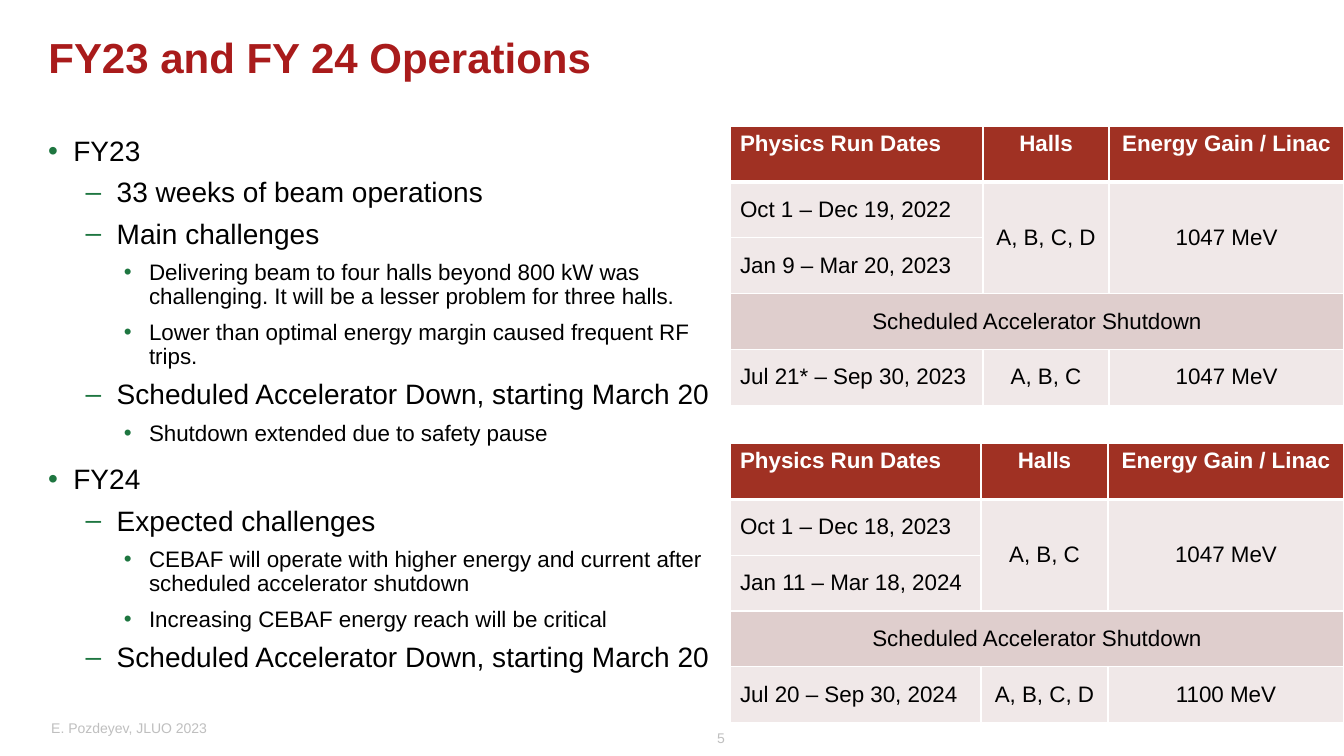
from lxml import etree
from pptx import Presentation
from pptx.dml.color import RGBColor
from pptx.enum.text import MSO_ANCHOR, PP_ALIGN
from pptx.oxml.ns import qn
from pptx.util import Inches, Pt

TOP, MIDDLE = MSO_ANCHOR.TOP, MSO_ANCHOR.MIDDLE
LEFT, CENTER, RIGHT = PP_ALIGN.LEFT, PP_ALIGN.CENTER, PP_ALIGN.RIGHT

RED = RGBColor(0xA9, 0x1B, 0x1B)
BRICK = RGBColor(0xA0, 0x31, 0x23)
PALE = RGBColor(0xF0, 0xE8, 0xE8)
ROSE = RGBColor(0xDF, 0xCE, 0xCD)
GREEN = RGBColor(0x1E, 0x76, 0x40)
GREY = RGBColor(0xBF, 0xBF, 0xBF)
WHITE = RGBColor(0xFF, 0xFF, 0xFF)
BLACK = RGBColor(0, 0, 0)

TITLE = "FY23 and FY 24 Operations"
POINTS = [
    (0, "FY23"),
    (1, "33 weeks of beam operations"),
    (1, "Main challenges"),
    (2, "Delivering beam to four halls beyond 800 kW was challenging. "
        "It will be a lesser problem for three halls."),
    (2, "Lower than optimal energy margin caused frequent RF trips."),
    (1, "Scheduled Accelerator Down, starting March 20"),
    (2, "Shutdown extended due to safety pause"),
    (0, "FY24"),
    (1, "Expected challenges"),
    (2, "CEBAF will operate with higher energy and current after "
        "scheduled accelerator shutdown"),
    (2, "Increasing CEBAF energy reach will be critical"),
    (1, "Scheduled Accelerator Down, starting March 20"),
]
LEVELS = [
    ("•", 0.25, 0.25, 20, 14),
    ("–", 0.68, 0.31, 20, 8),
    ("•", 1, 0.25, 16, 8),
]
HEAD = ("Physics Run Dates", "Halls", "Energy Gain / Linac")
DOWN = ("Scheduled Accelerator Shutdown", "", "")
RUNS = [
    (1.25, (2.51, 1.25, 2.33), [
        HEAD,
        ("Oct 1 – Dec 19, 2022", "A, B, C, D", "1047 MeV"),
        ("Jan 9 – Mar 20, 2023", "", ""),
        DOWN,
        ("Jul 21* – Sep 30, 2023", "A, B, C", "1047 MeV"),
    ]),
    (4.4, (2.49, 1.26, 2.34), [
        HEAD,
        ("Oct 1 – Dec 18, 2023", "A, B, C", "1047 MeV"),
        ("Jan 11 – Mar 18, 2024", "", ""),
        DOWN,
        ("Jul 20 – Sep 30, 2024", "A, B, C, D", "1100 MeV"),
    ]),
]
FOOTS = [
    ("E. Pozdeyev, JLUO 2023", (0.41, 7.12, 4.22, 0.2), 0.1, MIDDLE, LEFT),
    ("5", (6.88, 7.24, 0.31, 0.17), 0, TOP, RIGHT),
]


def style(para, size, color, bold=False, align=LEFT):
    para.alignment = align
    font = para.font
    font.name, font.size, font.bold = "Arial", Pt(size), bold
    font.color.rgb = color


def add_box(slide, place):
    frame = slide.shapes.add_textbox(*map(Inches, place)).text_frame
    frame.word_wrap = True
    return frame


def add_bullet(para, sign, left, hang):
    props = para._p.get_or_add_pPr()
    props.set("marL", str(Inches(left)))
    props.set("indent", str(-Inches(hang)))
    tint = etree.SubElement(props, qn("a:buClr"))
    etree.SubElement(tint, qn("a:srgbClr"), val=str(GREEN))
    etree.SubElement(props, qn("a:buFont"), typeface="Arial")
    etree.SubElement(props, qn("a:buChar"), char=sign)


def add_edges(cell, top, base):
    props = cell._tc.get_or_add_tcPr()
    sides = (("L", 1), ("R", 1), ("T", top), ("B", base))
    for spot, (side, width) in enumerate(sides):
        line = etree.Element(qn("a:ln" + side), w=str(Pt(width)))
        fill = etree.SubElement(line, qn("a:solidFill"))
        etree.SubElement(fill, qn("a:srgbClr"), val=str(WHITE))
        props.insert(spot, line)


def add_runs(slide, top, widths, rows):
    place = map(Inches, (7.24, top, sum(widths), 2.77))
    table = slide.shapes.add_table(len(rows), len(widths), *place).table
    for col, width in zip(table.columns, widths):
        col.width = Inches(width)
    for r, row in enumerate(rows):
        for c, text in enumerate(row):
            cell = table.cell(r, c)
            cell.text = text
            cell.vertical_anchor = MIDDLE if r else TOP
            cell.fill.solid()
            cell.fill.fore_color.rgb = (
                BRICK if r == 0 else ROSE if row is DOWN else PALE)
            style(cell.text_frame.paragraphs[0], 16, BLACK if r else WHITE,
                  r == 0, CENTER if c or row is DOWN else LEFT)
            add_edges(cell, 3 if r == 1 else 1, 1 if r else 3)
    for c in (1, 2):
        table.cell(1, c).merge(table.cell(2, c))
    table.cell(3, 0).merge(table.cell(3, 2))


def main():
    deck = Presentation()
    deck.slide_width, deck.slide_height = Inches(13.33), Inches(7.5)
    slide = deck.slides.add_slide(deck.slide_layouts[5])

    title = slide.shapes.title
    title.left, title.top = Inches(0.38), Inches(0.34)
    title.width, title.height = Inches(12.49), Inches(0.53)
    title.text = TITLE
    title.text_frame.vertical_anchor = MIDDLE
    para = title.text_frame.paragraphs[0]
    para.line_spacing = 0.85
    style(para, 30, RED, True)

    frame = add_box(slide, (0.38, 1.31, 6.76, 5.73))
    for i, (level, text) in enumerate(POINTS):
        sign, left, hang, size, gap = LEVELS[level]
        para = frame.add_paragraph() if i else frame.paragraphs[0]
        para.text, para.level, para.line_spacing = text, level, 0.9
        if i:
            para.space_before = Pt(gap)
        add_bullet(para, sign, left, hang)
        style(para, size, BLACK)

    for top, widths, rows in RUNS:
        add_runs(slide, top, widths, rows)

    for text, place, inset, anchor, align in FOOTS:
        frame = add_box(slide, place)
        frame.margin_left = frame.margin_right = Inches(inset)
        frame.margin_top = frame.margin_bottom = 0
        frame.vertical_anchor = anchor
        para = frame.paragraphs[0]
        para.text = text
        style(para, 10, GREY, align=align)

    deck.save("out.pptx")


if __name__ == "__main__":
    main()
